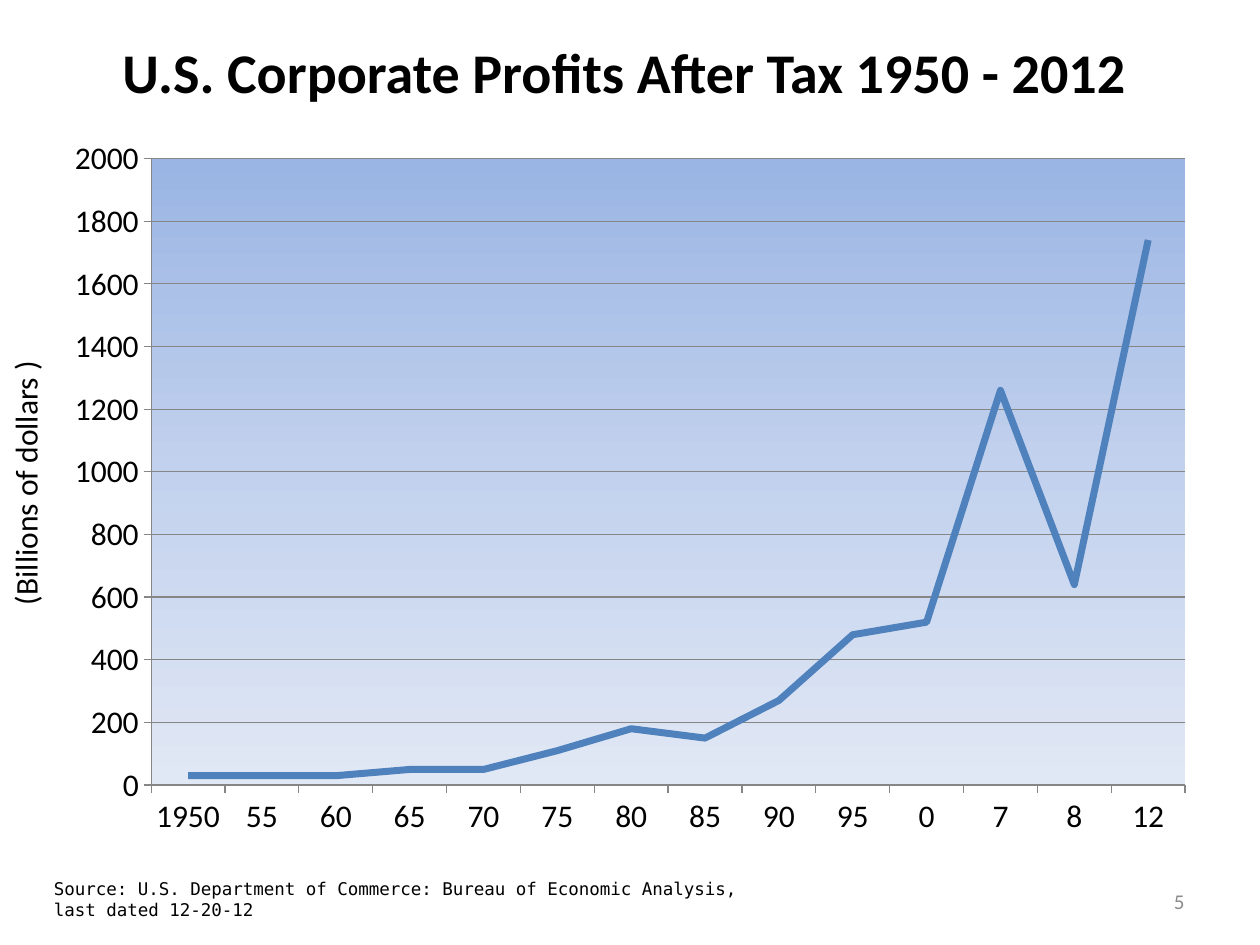
import pptx
import pptx.chart.data
import pptx.dml.color
import pptx.enum.chart
import pptx.enum.text
import pptx.oxml
import pptx.oxml.ns
import pptx.util

Inches = pptx.util.Inches
Pt = pptx.util.Pt
RGBColor = pptx.dml.color.RGBColor
ALIGN = pptx.enum.text.PP_ALIGN
ANCHOR = pptx.enum.text.MSO_ANCHOR

BLACK = RGBColor(0x00, 0x00, 0x00)
GREY = RGBColor(0x8C, 0x8C, 0x8C)
AXIS_GREY = RGBColor(0x86, 0x86, 0x86)
LINE_BLUE = RGBColor(0x4F, 0x81, 0xBD)
PLOT_GRADIENT = (
    (0, RGBColor(0x9A, 0xB5, 0xE4)),
    (50, RGBColor(0xC2, 0xD1, 0xED)),
    (100, RGBColor(0xE1, 0xE8, 0xF5)),
)
# Inner plot area as fractions of the chart: x, y, width, height
PLOT_LAYOUT = (("x", 0.085), ("y", 0.045), ("w", 0.895), ("h", 0.865))

PROFITS = {
    "1950": 30, "55": 30, "60": 30, "65": 50, "70": 50, "75": 110, "80": 180,
    "85": 150, "90": 270, "95": 480, "0": 520, "7": 1260, "8": 640, "12": 1740,
}


def add_text(page, text, left, top, width, height, size=18, font="Calibri",
             color=BLACK, bold=False, align=ALIGN.LEFT, anchor=ANCHOR.TOP,
             wrap=True, rotation=0):
    box = page.shapes.add_textbox(Inches(left), Inches(top), Inches(width), Inches(height))
    box.rotation = rotation
    frame = box.text_frame
    frame.word_wrap = wrap
    frame.vertical_anchor = anchor
    para = frame.paragraphs[0]
    para.alignment = align
    span = para.add_run()
    span.text = text
    span.font.name = font
    span.font.size = Pt(size)
    span.font.bold = bold
    span.font.color.rgb = color
    return box


def style_plot_area(chart):
    """Fix the inner plot area and give it a vertical gradient."""
    plot_area = chart.element.chart.plotArea
    namespaces = pptx.oxml.ns.nsdecls("c", "a")
    for old in plot_area.findall(pptx.oxml.ns.qn("c:layout")):
        plot_area.remove(old)
    modes = "".join(f'<c:{side}Mode val="edge"/>' for side in "xy")
    sizes = "".join(f'<c:{key} val="{value}"/>' for key, value in PLOT_LAYOUT)
    plot_area.insert(0, pptx.oxml.parse_xml(
        f'<c:layout {namespaces}><c:manualLayout><c:layoutTarget val="inner"/>'
        f'{modes}{sizes}</c:manualLayout></c:layout>'))
    stops = "".join(
        f'<a:gs pos="{percent * 1000}"><a:srgbClr val="{color}"/></a:gs>'
        for percent, color in PLOT_GRADIENT)
    plot_area.append(pptx.oxml.parse_xml(
        f'<c:spPr {namespaces}><a:gradFill><a:gsLst>{stops}</a:gsLst>'
        f'<a:lin ang="5400000" scaled="0"/></a:gradFill></c:spPr>'))


def add_profit_chart(page):
    data = pptx.chart.data.CategoryChartData()
    data.categories = list(PROFITS)
    data.add_series("Series 1", list(PROFITS.values()))
    chart = page.shapes.add_chart(
        pptx.enum.chart.XL_CHART_TYPE.LINE,
        Inches(0.42), Inches(1), Inches(9.17), Inches(5.75), data).chart
    chart.has_title = False
    chart.has_legend = False
    chart.font.name = "Calibri"
    chart.font.size = Pt(18)
    chart.font.color.rgb = BLACK

    # Axes and gridlines
    for axis in (chart.category_axis, chart.value_axis):
        axis.major_tick_mark = pptx.enum.chart.XL_TICK_MARK.OUTSIDE
        axis.minor_tick_mark = pptx.enum.chart.XL_TICK_MARK.NONE
        axis.format.line.color.rgb = AXIS_GREY
        axis.format.line.width = Pt(0.75)
    values = chart.value_axis
    values.minimum_scale, values.maximum_scale, values.major_unit = 0, 2000, 200
    values.has_major_gridlines = True
    values.major_gridlines.format.line.color.rgb = AXIS_GREY
    values.major_gridlines.format.line.width = Pt(0.75)

    # Profit line
    plot = chart.plots[0]
    plot.vary_by_categories = False
    series = plot.series[0]
    series.smooth = False
    series.format.line.color.rgb = LINE_BLUE
    series.format.line.width = Pt(4)
    style_plot_area(chart)


def main():
    deck = pptx.Presentation()
    deck.slide_width, deck.slide_height = Inches(10), Inches(7.5)
    page = deck.slides.add_slide(deck.slide_layouts[6])

    # Page number and title
    add_text(page, "5", 7.17, 6.95, 2.33, 0.4, size=12, color=GREY,
             align=ALIGN.RIGHT, anchor=ANCHOR.MIDDLE)
    add_text(page, "U.S. Corporate Profits After Tax 1950 - 2012",
             0.58, 0.25, 8.75, 0.64, size=32, bold=True, align=ALIGN.CENTER)

    add_profit_chart(page)

    # Source note and axis caption
    add_text(page, "Source: U.S. Department of Commerce: Bureau of Economic Analysis, "
             "last dated 12-20-12", 0.33, 7, 5.84, 0.27, size=10,
             font="DejaVu Sans Mono", anchor=ANCHOR.MIDDLE)
    add_text(page, "(Billions of dollars )", -0.88, 3.62, 2.16, 0.4,
             wrap=False, rotation=270)

    deck.save("out.pptx")


if __name__ == "__main__":
    main()
